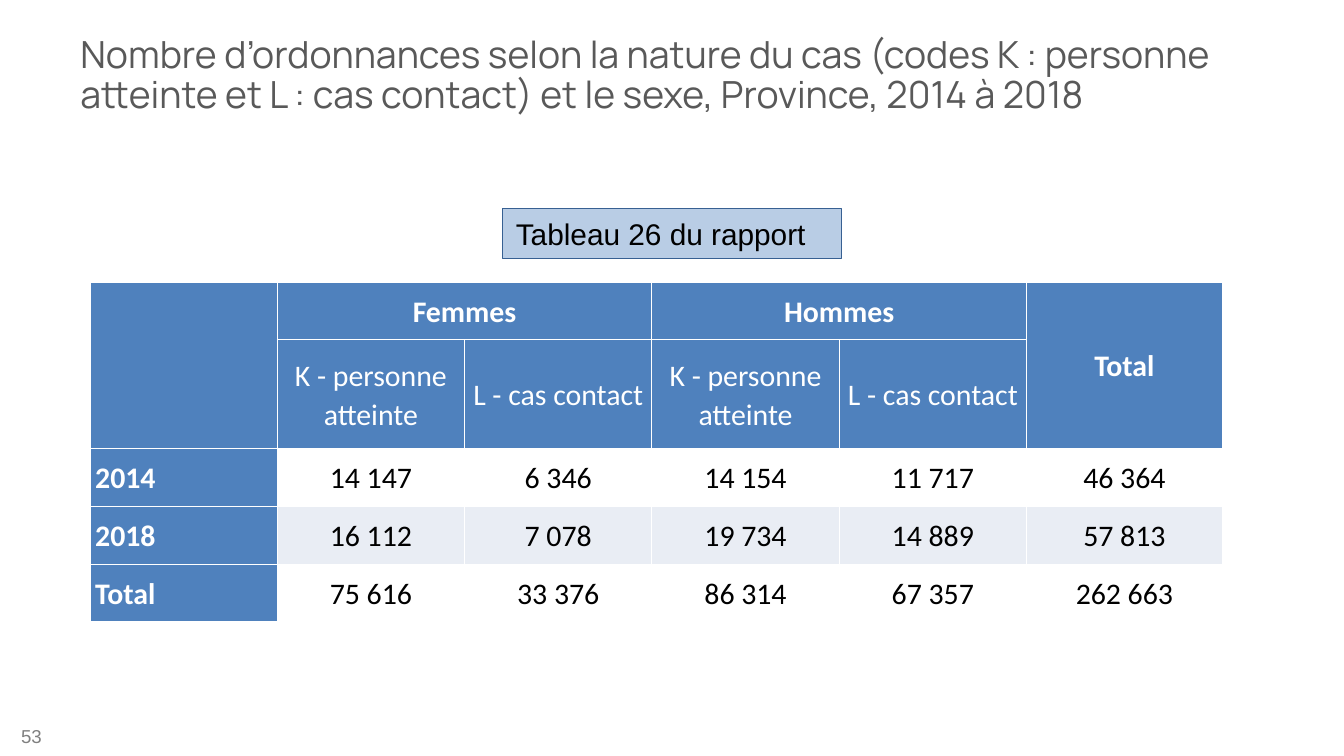
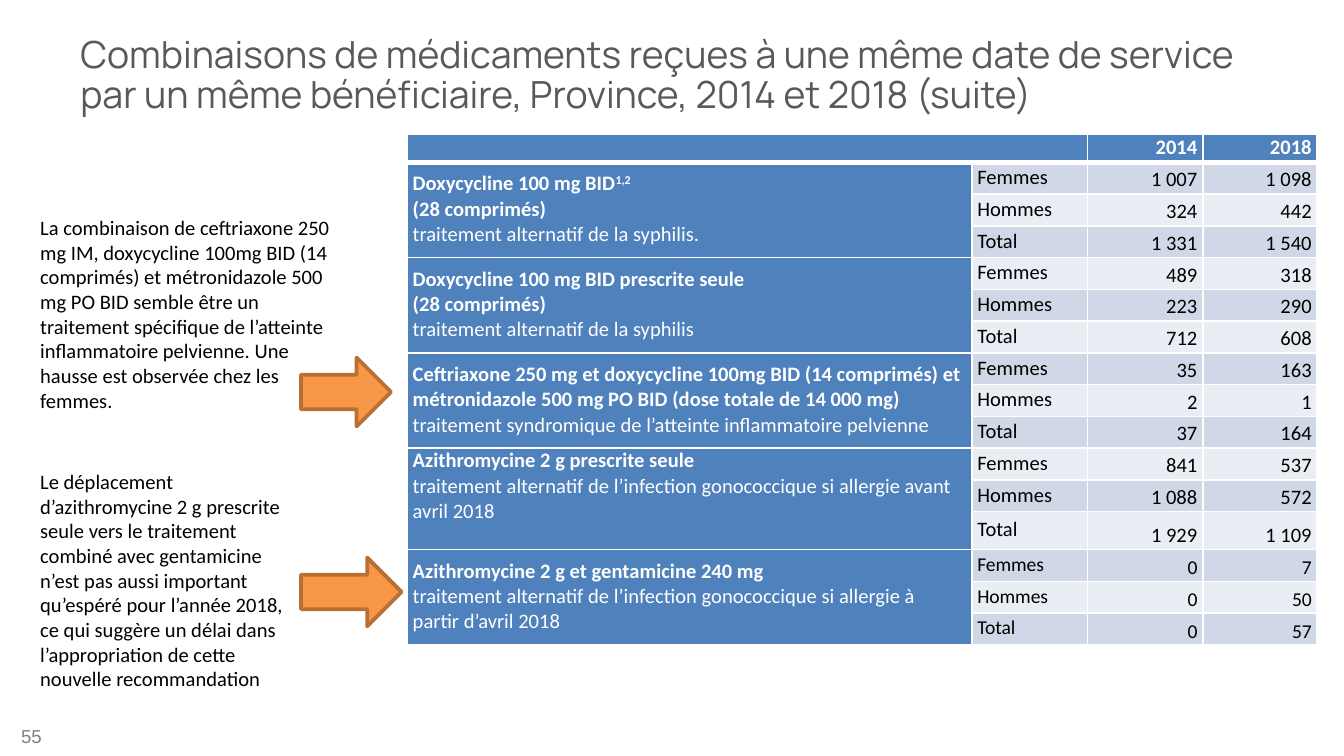
import lxml.etree
import pptx
import pptx.dml.color
import pptx.enum.shapes
import pptx.enum.text
import pptx.oxml.ns
import pptx.util

Cm, Pt = pptx.util.Cm, pptx.util.Pt
ALIGN, ANCHOR = pptx.enum.text.PP_ALIGN, pptx.enum.text.MSO_ANCHOR
SHAPE = pptx.enum.shapes.MSO_SHAPE

COLORS = {
    "title": "595959", "page": "808080", "text": "000000", "white": "FFFFFF",
    "header": "4F81BD", "band_dark": "D0D8E8", "band_light": "E9EDF4",
    "label": "B9CDE5", "label_line": "376092",
    "arrow": "F79646", "arrow_line": "B76F34",
}

# Content: prescriptions by type of case and sex
CASES_TITLE = ("Nombre d’ordonnances selon la nature du cas (codes K : personne atteinte "
               "et L : cas contact) et le sexe, Province, 2014 à 2018")
CASES_LABEL = "Tableau 26 du rapport"
SEXES = ["Femmes", "Hommes"]
CASE_TYPES = ["K - personne atteinte", "L - cas contact"]
CASE_ROWS = [
    ("2014", 14147, 6346, 14154, 11717, 46364),
    ("2018", 16112, 7078, 19734, 14889, 57813),
    ("Total", 75616, 33376, 86314, 67357, 262663),
]

# Content: drug combinations
DRUGS_TITLE = ("Combinaisons de médicaments reçues à une même date de service par un même "
               "bénéficiaire, Province, 2014 et 2018 (suite)")
YEARS = ["2014", "2018"]
ROW_LABELS = SEXES + ["Total"]
DRUG_GROUPS = [
    {"names": ["Doxycycline 100 mg BID", "(28 comprimés)"], "note_marks": "1,2",
     "use": "traitement alternatif de la syphilis.",
     "counts": [(1007, 1098), (324, 442), (1331, 1540)]},
    {"names": ["Doxycycline 100 mg BID prescrite seule", "(28 comprimés)"],
     "use": "traitement alternatif de la syphilis",
     "counts": [(489, 318), (223, 290), (712, 608)]},
    {"names": ["Ceftriaxone 250 mg et doxycycline 100mg BID (14 comprimés) et "
               "métronidazole 500 mg PO BID (dose totale de 14 000 mg)"],
     "use": "traitement syndromique de l’atteinte inflammatoire pelvienne",
     "counts": [(35, 163), (2, 1), (37, 164)]},
    {"names": ["Azithromycine 2 g prescrite seule"],
     "use": "traitement alternatif de l’infection gonococcique si allergie avant avril 2018",
     "counts": [(841, 537), (1088, 572), (1929, 1109)],
     "anchor": ANCHOR.TOP, "spacing": 1.07, "last_height": 0.72},
    {"names": ["Azithromycine 2 g et gentamicine 240 mg"],
     "use": "traitement alternatif de l’infection gonococcique si allergie à partir d’avril 2018",
     "counts": [(0, 7), (0, 50), (0, 57)], "size": 10.5},
]
# Side notes: text, box; and the arrows beside them
NOTES = [
    ("La combinaison de ceftriaxone 250 mg IM, doxycycline 100mg BID (14 comprimés) et "
     "métronidazole 500 mg PO BID semble être un traitement spécifique de l’atteinte "
     "inflammatoire pelvienne. Une hausse est observée chez les femmes.",
     (0.51, 3.94, 6.1, 4.52)),
    ("Le déplacement d’azithromycine 2 g prescrite seule vers le traitement combiné avec "
     "gentamicine n’est pas aussi important qu’espéré pour l’année 2018, ce qui suggère un "
     "délai dans l’appropriation de cette nouvelle recommandation",
     (0.51, 8.74, 5.51, 4.5)),
]
ARROWS = [(5.69, 6.76, 1.7, 1.3), (5.69, 10.54, 1.9, 1.3)]


# Shared helpers
def rgb(name):
    return pptx.dml.color.RGBColor.from_string(COLORS[name])


def grouped(number):
    return f"{number:,}".replace(",", "\u00a0")


def format_paragraph(paragraph, size, font="Calibri", color="text", bold=False,
                     align=ALIGN.LEFT, spacing=None):
    paragraph.alignment = align
    if spacing:
        paragraph.line_spacing = spacing
    for run in paragraph.runs:
        run.font.size, run.font.name, run.font.bold = Pt(size), font, bold
        run.font.color.rgb = rgb(color)


def add_text(slide, text, box, size, anchor=ANCHOR.TOP, **style):
    shape = slide.shapes.add_textbox(*map(Cm, box))
    shape.text_frame.word_wrap = True
    shape.text_frame.vertical_anchor = anchor
    shape.text_frame.text = text
    format_paragraph(shape.text_frame.paragraphs[0], size, **style)


def add_block(slide, kind, box, fill, line, width):
    shape = slide.shapes.add_shape(kind, *map(Cm, box))
    shape.shadow.inherit = False
    shape.fill.solid()
    shape.fill.fore_color.rgb = rgb(fill)
    shape.line.color.rgb = rgb(line)
    shape.line.width = Pt(width)
    return shape


def add_slide(presentation, title, page):
    slide = presentation.slides.add_slide(presentation.slide_layouts[6])
    add_text(slide, title, (1.27, 0.25, 22.86, 2.39), 20, ANCHOR.MIDDLE,
             font="Manrope", color="title", spacing=0.9)
    add_text(slide, page, (-0.18, 13.54, 1.22, 0.76), 10, ANCHOR.MIDDLE,
             font="Arial", color="page", align=ALIGN.RIGHT)
    return slide


def add_grid(slide, left, top, widths, heights, border, margins):
    """Add a table with white borders, uniform margins and header-coloured cells."""
    table = slide.shapes.add_table(len(heights), len(widths), Cm(left), Cm(top),
                                   Cm(sum(widths)), Cm(sum(heights))).table
    table.first_row = table.horz_banding = False
    for column, width in zip(table.columns, widths):
        column.width = Cm(width)
    for row, height in zip(table.rows, heights):
        row.height = Cm(height)
    for cell in table.iter_cells():
        (cell.margin_left, cell.margin_top,
         cell.margin_right, cell.margin_bottom) = map(Cm, margins)
        cell.vertical_anchor = ANCHOR.MIDDLE
        for side in ("lnL", "lnR", "lnT", "lnB"):
            set_border(cell, side, border)
        fill_cell(cell, "header")
        # Small end mark, so that an empty cell does not stretch its row
        mark = cell.text_frame.paragraphs[0]._p
        lxml.etree.SubElement(mark, pptx.oxml.ns.qn("a:endParaRPr"), sz="1000")
    return table


def set_border(cell, side, width):
    properties = cell._tc.get_or_add_tcPr()
    tag = pptx.oxml.ns.qn("a:" + side)
    line = properties.find(tag)
    if line is None:
        line = lxml.etree.SubElement(properties, tag)
        fill = lxml.etree.SubElement(line, pptx.oxml.ns.qn("a:solidFill"))
        lxml.etree.SubElement(fill, pptx.oxml.ns.qn("a:srgbClr"), val=COLORS["white"])
    line.set("w", str(Pt(width)))


def fill_cell(cell, color):
    cell.fill.solid()
    cell.fill.fore_color.rgb = rgb(color)


def write_cell(cell, text, fill, size, **style):
    fill_cell(cell, fill)
    paragraph = cell.text_frame.paragraphs[0]
    paragraph.text = text
    format_paragraph(paragraph, size, **style)
    return paragraph


# Slide: prescriptions by type of case and sex
def build_cases(presentation):
    slide = add_slide(presentation, CASES_TITLE, "53")
    table = add_grid(slide, 1.7, 5.33, [3.54] * 5 + [3.7], [1.09, 2.06] + [1.09] * 3,
                     0.5, (0.1, 0.05, 0.1, 0.05))
    centred = {"size": 16, "align": ALIGN.CENTER, "spacing": 1.07}
    heading = {"fill": "header", "color": "white"}

    for column in (0, 5):
        table.cell(0, column).merge(table.cell(1, column))
    write_cell(table.cell(0, 5), "Total", bold=True, **heading, **centred)
    for index, sex in enumerate(SEXES):
        first = 1 + index * len(CASE_TYPES)
        table.cell(0, first).merge(table.cell(0, first + 1))
        write_cell(table.cell(0, first), sex, bold=True, **heading, **centred)
        for offset, case_type in enumerate(CASE_TYPES):
            write_cell(table.cell(1, first + offset), case_type, **heading, **centred)

    for row, (name, *counts) in enumerate(CASE_ROWS, 2):
        write_cell(table.cell(row, 0), name, size=16, bold=True, spacing=1.07, **heading)
        fill = "band_light" if row % 2 else "white"
        for column, count in enumerate(counts, 1):
            write_cell(table.cell(row, column), grouped(count), fill, **centred)

    label = add_block(slide, SHAPE.RECTANGLE, (9.5, 3.94, 6.4, 0.95),
                      "label", "label_line", 0.75)
    label.text_frame.text = CASES_LABEL
    format_paragraph(label.text_frame.paragraphs[0], 16, font="Arial")


# Slide: drug combinations
def write_number(cell, text, fill, size, **style):
    paragraph = write_cell(cell, text, fill, size, align=ALIGN.RIGHT, **style)
    paragraph.space_before = paragraph.space_after = Pt(3)


def write_drug(cell, group):
    lines = group["names"] + [group["use"]]
    cell.vertical_anchor = group.get("anchor", ANCHOR.MIDDLE)
    for index, line in enumerate(lines):
        paragraph = (cell.text_frame.add_paragraph() if index
                     else cell.text_frame.paragraphs[0])
        paragraph.text = line
        if index == 0 and "note_marks" in group:
            marks = paragraph.add_run()
            marks.text = group["note_marks"]
            marks._r.get_or_add_rPr().set("baseline", "30000")
        format_paragraph(paragraph, 11, color="white", bold=line != group["use"])


def build_drugs(presentation):
    slide = add_slide(presentation, DRUGS_TITLE, "55")
    heights = [0.53]
    for group in DRUG_GROUPS:
        heights += [0.6, 0.6, group.get("last_height", 0.6)]
    table = add_grid(slide, 7.7, 2.54, [10.67, 2.18, 2.18, 2.16], heights,
                     1, (0.1, 0, 0.1, 0.03))

    table.cell(0, 0).merge(table.cell(0, 1))
    for column, year in enumerate(YEARS, 2):
        write_number(table.cell(0, column), year, "header", 11, color="white", bold=True)
    for column in range(4):
        set_border(table.cell(0, column), "lnB", 3)

    for index, group in enumerate(DRUG_GROUPS):
        first = 1 + index * len(ROW_LABELS)
        table.cell(first, 0).merge(table.cell(first + len(ROW_LABELS) - 1, 0))
        write_drug(table.cell(first, 0), group)
        size = group.get("size", 11)
        for row, (name, counts) in enumerate(zip(ROW_LABELS, group["counts"]), first):
            fill = "band_dark" if row % 2 else "band_light"
            write_cell(table.cell(row, 1), name, fill, size)
            for column, count in enumerate(counts, 2):
                cell = table.cell(row, column)
                cell.vertical_anchor = ANCHOR.BOTTOM
                write_number(cell, grouped(count), fill, size, spacing=group.get("spacing"))

    for text, box in NOTES:
        add_text(slide, text, box, 11)
    for box in ARROWS:
        add_block(slide, SHAPE.RIGHT_ARROW, box, "arrow", "arrow_line", 2)


def main():
    presentation = pptx.Presentation()
    presentation.slide_width, presentation.slide_height = Cm(25.4), Cm(14.29)
    build_cases(presentation)
    build_drugs(presentation)
    presentation.save("out.pptx")


if __name__ == "__main__":
    main()
